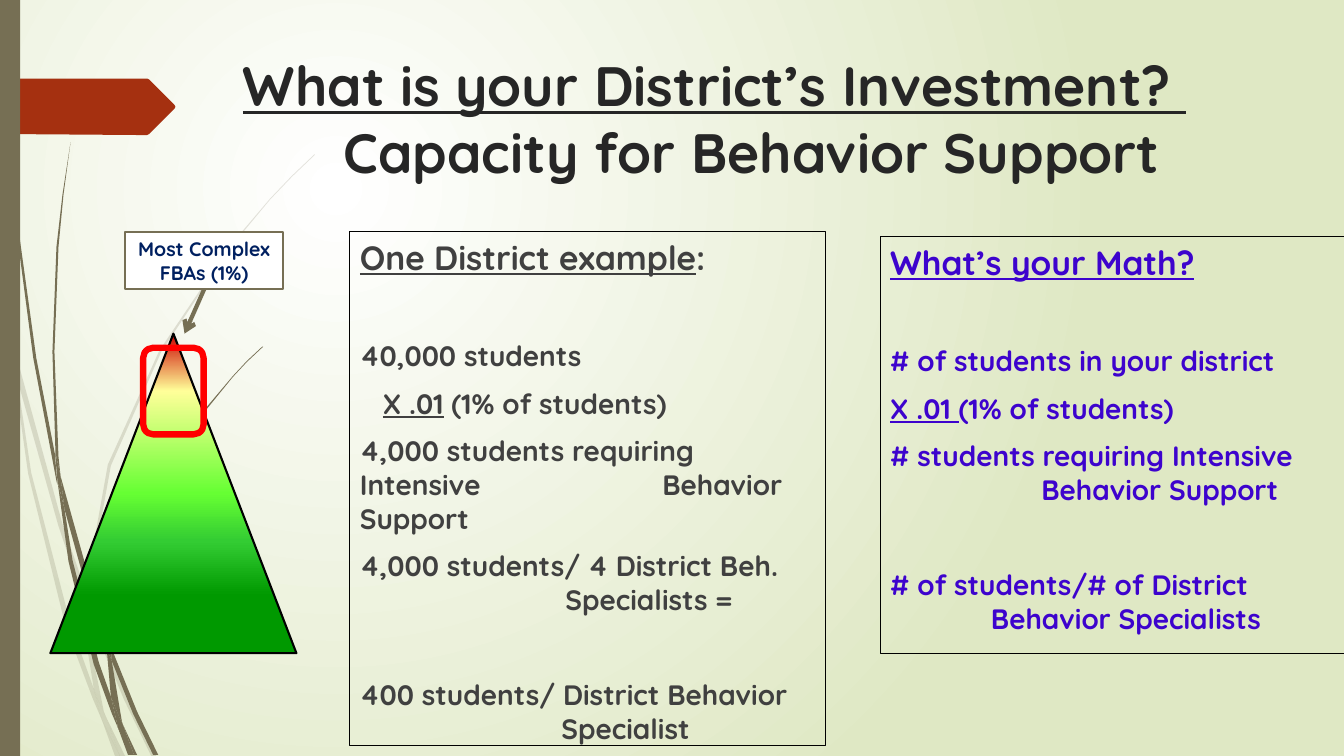
from pptx import Presentation
from pptx.dml.color import RGBColor
from pptx.enum.shapes import MSO_CONNECTOR, MSO_SHAPE
from pptx.enum.text import MSO_ANCHOR, PP_ALIGN
from pptx.oxml import parse_xml
from pptx.oxml.ns import nsdecls, qn
from pptx.util import Inches, Pt

RECT, ROUNDED = MSO_SHAPE.RECTANGLE, MSO_SHAPE.ROUNDED_RECTANGLE
TRIANGLE, STRAIGHT = MSO_SHAPE.ISOSCELES_TRIANGLE, MSO_CONNECTOR.STRAIGHT
TOP, MIDDLE = MSO_ANCHOR.TOP, MSO_ANCHOR.MIDDLE
LEFT, CENTER = PP_ALIGN.LEFT, PP_ALIGN.CENTER

OLIVE = RGBColor(0x76, 0x6F, 0x54)
RUST = RGBColor(0xA5, 0x30, 0x10)
INK = RGBColor(0x26, 0x26, 0x26)
GRAY = RGBColor(0x40, 0x40, 0x40)
VIOLET = RGBColor(0x3D, 0x03, 0xCD)
NAVY = RGBColor(0x00, 0x20, 0x60)
BLACK = RGBColor(0, 0, 0)
WHITE = RGBColor(0xFF, 0xFF, 0xFF)
RED = RGBColor(0xFF, 0, 0)

# The slide is a grid of 1333 columns by 750 rows
COLS, ROWS = 1333, 750
U = Inches(0.01)

prs = Presentation()
prs.slide_width, prs.slide_height = COLS * U, ROWS * U
s = prs.slides.add_slide(prs.slide_layouts[6])


def box(kind, x, y, w, h, fill=None, line=None, width=1, anchor=TOP):
    sp = s.shapes.add_shape(kind, x * U, y * U, w * U, h * U)
    sp.shadow.inherit = False
    if fill is None:
        sp.fill.background()
    else:
        sp.fill.solid()
        sp.fill.fore_color.rgb = fill
    if line is None:
        sp.line.fill.background()
    else:
        sp.line.color.rgb = line
        sp.line.width = Pt(width)
    sp.text_frame.word_wrap = True
    sp.text_frame.vertical_anchor = anchor
    return sp


def write(tf, text, under="", size=20, color=GRAY, before=0, spacing=None,
          indent=0, tab=0, align=LEFT):
    """Add a paragraph: an underlined start, then plain lines split at \\v."""
    p = tf.paragraphs[0] if not tf.paragraphs[0].runs else tf.add_paragraph()
    p.alignment = align
    p.space_before = Pt(before)
    if spacing:
        p.line_spacing = Pt(spacing)
    pPr = p._p.get_or_add_pPr()
    pPr.set("marL", str(indent * U))
    if tab:
        pPr.append(parse_xml(f'<a:tabLst {nsdecls("a")}>'
                             f'<a:tab pos="{tab * U}" algn="l"/></a:tabLst>'))
    first, *rest = text.split("\v")
    for part, underlined in [(under, True), (first, False)] + [(t, False) for t in rest]:
        if part in rest:
            p.add_line_break()
        if part:
            r = p.add_run()
            r.text = part
            r.font.name, r.font.size, r.font.bold = "Quicksand", Pt(size), True
            r.font.underline = underlined
            r.font.color.rgb = color


# Grass blades: faint ones behind, solid ones in front
FAINT_BLADES = [
    [(11, 350), (9, 322), (0, 282), (0, 299), (10, 344)],
    [(58, 522), (84, 599), (85, 586), (62, 520), (14, 345), (17, 376)],
    [(92, 607), (88, 596), (88, 610), (123, 694), (150, 750), (155, 750), (127, 692)],
    [(119, 750), (124, 750), (105, 711)],
    [(93, 683), (70, 619), (31, 469), (17, 376), (11, 350), (28, 470), (65, 621),
     (92, 693), (101, 714), (99, 707)],
    [(84, 599), (87, 646), (93, 683), (96, 692), (105, 711), (103, 706), (91, 646),
     (88, 610), (88, 608)],
    [(88, 584), (110, 462), (160, 349), (229, 245), (268, 198), (290, 175), (312, 154),
     (312, 153), (289, 175), (268, 197), (228, 244), (158, 348), (107, 461), (85, 584),
     (85, 586), (88, 596)],
    [(101, 714), (114, 750), (119, 750)],
    [(88, 608), (88, 596), (85, 586), (84, 599)],
    [(96, 692), (93, 683), (99, 707), (101, 714), (119, 750), (105, 711)],
]
SOLID_BLADES = [
    [(7, 110), (17, 233), (33, 355), (56, 477), (57, 481), (55, 457), (55, 453),
     (36, 355), (19, 232), (8, 109), (5, 48), (4, 0), (3, 0), (4, 48)],
    [(88, 592), (106, 645), (106, 631), (93, 590), (60, 472), (64, 505)],
    [(113, 649), (110, 641), (111, 656), (132, 708), (152, 749), (157, 749), (136, 706)],
    [(110, 691), (98, 657), (72, 556), (64, 505), (57, 477), (68, 557), (93, 659),
     (111, 708), (117, 722), (116, 717)],
    [(60, 472), (58, 453), (54, 349), (58, 245), (63, 193), (70, 141), (62, 193),
     (56, 245), (52, 349), (55, 449)],
    [(133, 749), (136, 749), (122, 719)],
    [(57, 477), (64, 505), (60, 472), (55, 449), (55, 453)],
    [(111, 633), (125, 552), (158, 476), (205, 406), (231, 374), (245, 359), (261, 344),
     (260, 344), (245, 358), (231, 373), (204, 405), (156, 474), (122, 551), (106, 631),
     (110, 641)],
    [(117, 722), (127, 749), (131, 749)],
    [(106, 645), (110, 691), (116, 706), (122, 719), (121, 716), (111, 656), (109, 651)],
    [(106, 645), (109, 651), (111, 656), (110, 641), (106, 631)],
    [(116, 706), (110, 691), (116, 717), (117, 722), (130, 749), (133, 749), (122, 719)],
]
# Tab pointing right at the slide's left edge
TITLE_TAB = [(173, 108), (148, 133), (146, 134), (136, 134), (0, 133), (0, 78),
             (146, 78), (148, 79), (173, 104), (174, 106)]

outlines = [(b, OLIVE, 20) for b in FAINT_BLADES] + [(b, OLIVE, 100) for b in SOLID_BLADES]
for points, color, opacity in outlines + [(TITLE_TAB, RUST, 100)]:
    fb = s.shapes.build_freeform(*points[0], scale=U)
    fb.add_line_segments(points[1:], close=True)
    sp = fb.convert_to_shape()
    sp.shadow.inherit = False
    sp.line.fill.background()
    sp.fill.solid()
    sp.fill.fore_color.rgb = color
    if opacity < 100:
        clr = sp._element.spPr.find(qn("a:solidFill"))[0]
        clr.append(parse_xml(f'<a:alpha {nsdecls("a")} val="{opacity * 1000}"/>'))
box(RECT, 0, 0, 20, ROWS, fill=OLIVE)

# Title
tf = box(RECT, 231, 46, 975, 140).text_frame
write(tf, "", under="What is your District’s Investment? ", size=39.6, color=INK)
write(tf, "Capacity for Behavior Support", size=39.6, color=INK, indent=100)

# Text panels: a heading, then lines; a wider space before opens a new step
STEP, NEXT = 44, 10
PANELS = [
    ((873, 235, 472, 413), VIOLET, "What’s your Math?", "", [
        ("", "# of students in your district", STEP, 0, 0),
        ("X .01 ", "(1% of students)", NEXT, 0, 0),
        ("", "# students requiring Intensive\v\tBehavior Support", NEXT, 0, 150),
        ("", "# of students/# of District\v\tBehavior Specialists", STEP, 0, 100)]),
    ((347, 230, 472, 510), GRAY, "One District example", ":", [
        ("", "40,000 students", STEP, 0, 0),
        ("X .01", " (1% of students)", NEXT, 23, 0),
        ("", "4,000 students requiring Intensive\tBehavior Support", NEXT, 0, 300),
        ("", "4,000 students/ 4 District Beh.\v\tSpecialists =", NEXT, 0, 204),
        ("", "400 students/ District Behavior\v\tSpecialist", STEP, 0, 200)]),
]
for place, color, heading, after, lines in PANELS:
    tf = box(RECT, *place, line=BLACK, width=0.75).text_frame
    write(tf, after, under=heading, size=24, color=color)
    for under, text, before, indent, tab in lines:
        write(tf, text, under=under, color=color, before=before, spacing=24,
              indent=indent, tab=tab)

# Pyramid with its label, arrow and marked tip
pyramid = box(TRIANGLE, 50, 331, 244, 317, line=BLACK, width=1.5)
label = box(RECT, 124, 230, 157, 57, fill=WHITE, line=OLIVE, width=1.75, anchor=MIDDLE)
write(label.text_frame, "Most Complex FBAs (1%)", size=14, color=NAVY, align=CENTER)
arrow = s.shapes.add_connector(STRAIGHT, 202 * U, 287 * U, 183 * U, 331 * U)
arrow.begin_connect(label, 2)
arrow.line.color.rgb = OLIVE
arrow.line.width = Pt(3)
arrow.line._get_or_add_ln().append(parse_xml(f'<a:tailEnd {nsdecls("a")} type="arrow"/>'))
arrow._element.spPr.append(parse_xml(f'<a:effectLst {nsdecls("a")}/>'))
box(ROUNDED, 142, 345, 60, 86, line=RED, width=4.5)

# Gradients of the background and the pyramid
pyramid.fill.gradient()
s.background.fill.gradient()
GLOW = ('<a:path {} path="circle">'
        '<a:fillToRect l="50000" t="50000" r="100000" b="100000"/></a:path>')
DOWN = '<a:lin {} ang="5400000" scaled="0"/>'
for owner, shade, stops in [
    (s._element.cSld.bg, GLOW, [(0, "FFFFFF"), (100, "DFE8C4")]),
    (pyramid._element.spPr, DOWN, [(0, "CC0000"), (18, "FFFF99"), (50, "66FF33"),
                                   (65, "33CC33"), (82, "009900")]),
]:
    grad = next(owner.iter(qn("a:gradFill")))
    for child in list(grad):
        grad.remove(child)
    marks = "".join(f'<a:gs pos="{pos * 1000}"><a:srgbClr val="{rgb}"/></a:gs>'
                    for pos, rgb in stops)
    grad.append(parse_xml(f'<a:gsLst {nsdecls("a")}>{marks}</a:gsLst>'))
    grad.append(parse_xml(shade.format(nsdecls("a"))))

prs.save("out.pptx")
